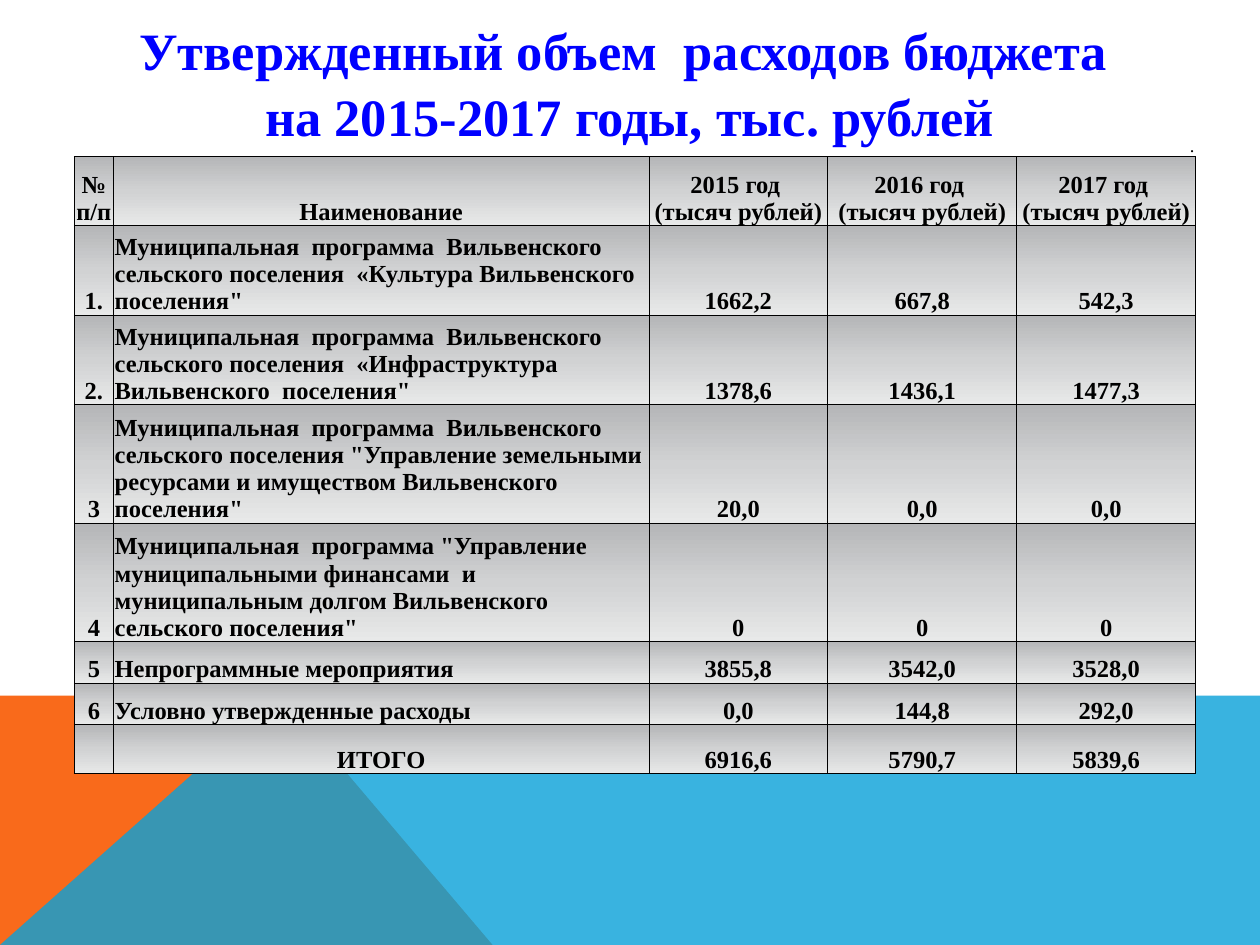
from dataclasses import dataclass

from pptx import Presentation
from pptx.dml.color import RGBColor
from pptx.enum.text import MSO_ANCHOR, PP_ALIGN
from pptx.oxml import parse_xml
from pptx.oxml.ns import nsdecls
from pptx.oxml.xmlchemy import OxmlElement
from pptx.util import Inches, Pt


@dataclass(frozen=True)
class Theme:
    """Colours, typeface and type sizes of the slide."""
    font: str = "Times New Roman"
    title: str = "0000FF"
    ink: str = "000000"
    orange: str = "F96A1B"
    blue: str = "08A1D9"
    shades: tuple = ((0, "B5B6B8"), (50, "D1D2D3"), (100, "E8E9E9"))
    title_size: float = 30
    body_size: float = 14
    note_size: float = 10.5
    rule: float = 0.5


T = Theme()
W, H = 10, 7.5
COLS = (0.31, 4.25, 1.42, 1.5, 1.42)
ROWS = (0.1, 0.55, 0.71, 0.71, 0.94, 0.94, 0.33, 0.33, 0.39)
TITLE = "Утвержденный объем  расходов бюджета \vна 2015-2017 годы, тыс. рублей"
HEADER = ("№ п/п", "Наименование",
          *(f"{year} год \n(тысяч рублей)" for year in (2015, 2016, 2017)))
BUDGET = (
    ("1.", "Муниципальная  программа  Вильвенского сельского поселения  "
     "«Культура Вильвенского  поселения\"", "1662,2", "667,8", "542,3"),
    ("2.", "Муниципальная  программа  Вильвенского сельского поселения  "
     "«Инфраструктура Вильвенского  поселения\"", "1378,6", "1436,1", "1477,3"),
    ("3", "Муниципальная  программа  Вильвенского сельского поселения "
     "\"Управление земельными ресурсами и имуществом Вильвенского  поселения\"",
     "20,0", "0,0", "0,0"),
    ("4", "Муниципальная  программа \"Управление муниципальными финансами  и "
     "муниципальным долгом Вильвенского сельского поселения\"", "0", "0", "0"),
    ("5", "Непрограммные мероприятия", "3855,8", "3542,0", "3528,0"),
    ("6", "Условно утвержденные расходы", "0,0", "144,8", "292,0"),
)
TOTAL = ("", "ИТОГО", "6916,6", "5790,7", "5839,6")


def style(p, size, color, bold, align):
    """Format one paragraph, including its end mark."""
    p.alignment = align
    p.font.name, p.font.size, p.font.bold = T.font, Pt(size), bold
    p.font.color.rgb = RGBColor.from_string(color)
    if not p.runs:
        end = OxmlElement("a:endParaRPr")
        end.set("sz", str(int(size * 100)))
        p._p.append(end)


def add_band(s, points, color, alpha=100):
    """Draw a flat polygon from points given as shares of the slide."""
    pts = [(Inches(W * x), Inches(H * y)) for x, y in points]
    builder = s.shapes.build_freeform(*pts[0])
    builder.add_line_segments(pts[1:], close=True)
    sp = builder.convert_to_shape()
    sp.shadow.inherit = False
    sp.line.fill.background()
    sp.fill.solid()
    sp.fill.fore_color.rgb = RGBColor.from_string(color)
    if alpha < 100:
        clr = sp._element.spPr.find(".//{*}srgbClr")
        clr.append(parse_xml(f'<a:alpha {nsdecls("a")} val="{alpha * 1000}"/>'))


def set_title(s):
    """Place and format the title in front of the bands."""
    sp = s.shapes.title
    sp.left, sp.top, sp.width, sp.height = map(Inches, (0.5, 0.13, 9, 1.02))
    tf = sp.text_frame
    tf.text, tf.word_wrap = TITLE, True
    tf.vertical_anchor = MSO_ANCHOR.MIDDLE
    tf.paragraphs[0].line_spacing = 1.05
    style(tf.paragraphs[0], T.title_size, T.title, True, PP_ALIGN.CENTER)
    s.shapes._spTree.append(sp._element)


def paint_cell(cell, boxed):
    """Give a cell its rules and gradient, or only a bottom rule."""
    solid = f'<a:solidFill><a:srgbClr val="{T.ink}"/></a:solidFill>'
    tcPr = cell._tc.get_or_add_tcPr()
    for side in "LRTB":
        paint = solid if boxed or side == "B" else "<a:noFill/>"
        tcPr.append(parse_xml(
            f'<a:ln{side} {nsdecls("a")} w="{Pt(T.rule)}">{paint}</a:ln{side}>'))
    if not boxed:
        cell.fill.background()
        return
    stops = "".join(f'<a:gs pos="{pos * 1000}"><a:srgbClr val="{c}"/></a:gs>'
                    for pos, c in T.shades)
    tcPr.append(parse_xml(
        f'<a:gradFill {nsdecls("a")} rotWithShape="1"><a:gsLst>{stops}</a:gsLst>'
        '<a:lin ang="5400000" scaled="0"/></a:gradFill>'))


def fill_cell(cell, text, size, bold, align, boxed=True):
    """Write and format one table cell."""
    cell.text = text
    cell.margin_left = cell.margin_right = cell.margin_top = Inches(0.01)
    cell.margin_bottom = 0
    cell.vertical_anchor = MSO_ANCHOR.BOTTOM
    for p in cell.text_frame.paragraphs:
        style(p, size, T.ink, bold, align)
    paint_cell(cell, boxed)


def add_budget(s):
    """Add the budget table under its narrow note row."""
    tbl = s.shapes.add_table(len(ROWS), len(COLS), Inches(0.59), Inches(1.07),
                             Inches(sum(COLS)), Inches(sum(ROWS))).table
    tbl.first_row = tbl.horz_banding = False
    for col, width in zip(tbl.columns, COLS):
        col.width = Inches(width)
    for row, height in zip(tbl.rows, ROWS):
        row.height = Inches(height)
    for c, text in enumerate(("", "", "", "", ".")):
        fill_cell(tbl.cell(0, c), text, T.note_size, False, PP_ALIGN.RIGHT, False)
    for r, row in enumerate((HEADER, *BUDGET, TOTAL), 1):
        for c, text in enumerate(row):
            is_name = c == 1 and row in BUDGET
            align = PP_ALIGN.LEFT if is_name else PP_ALIGN.CENTER
            fill_cell(tbl.cell(r, c), text, T.body_size, True, align)
    tbl.cell(1, 1).text_frame.paragraphs[0].line_spacing = 1.15


def main():
    """Build and save the slide."""
    prs = Presentation()
    prs.slide_width, prs.slide_height = Inches(W), Inches(H)
    s = prs.slides.add_slide(prs.slide_layouts[5])
    top, peak = 5.52 / H, 2.23 / W
    add_band(s, ((0, 1), (0, top), (peak, top), (3.91 / W, 1)), T.orange)
    add_band(s, ((0, 1), (peak, top), (1, top), (1, 1)), T.blue, 80)
    set_title(s)
    add_budget(s)
    prs.save("out.pptx")


if __name__ == "__main__":
    main()
